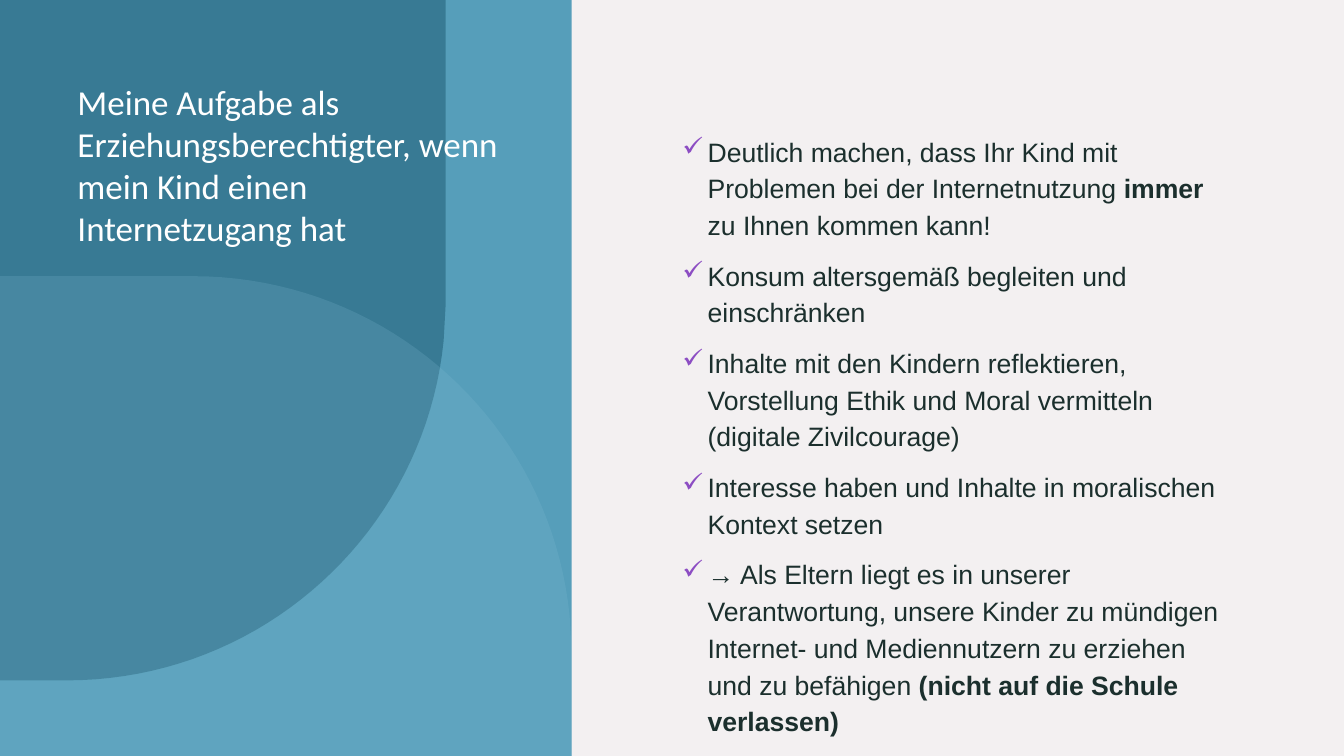
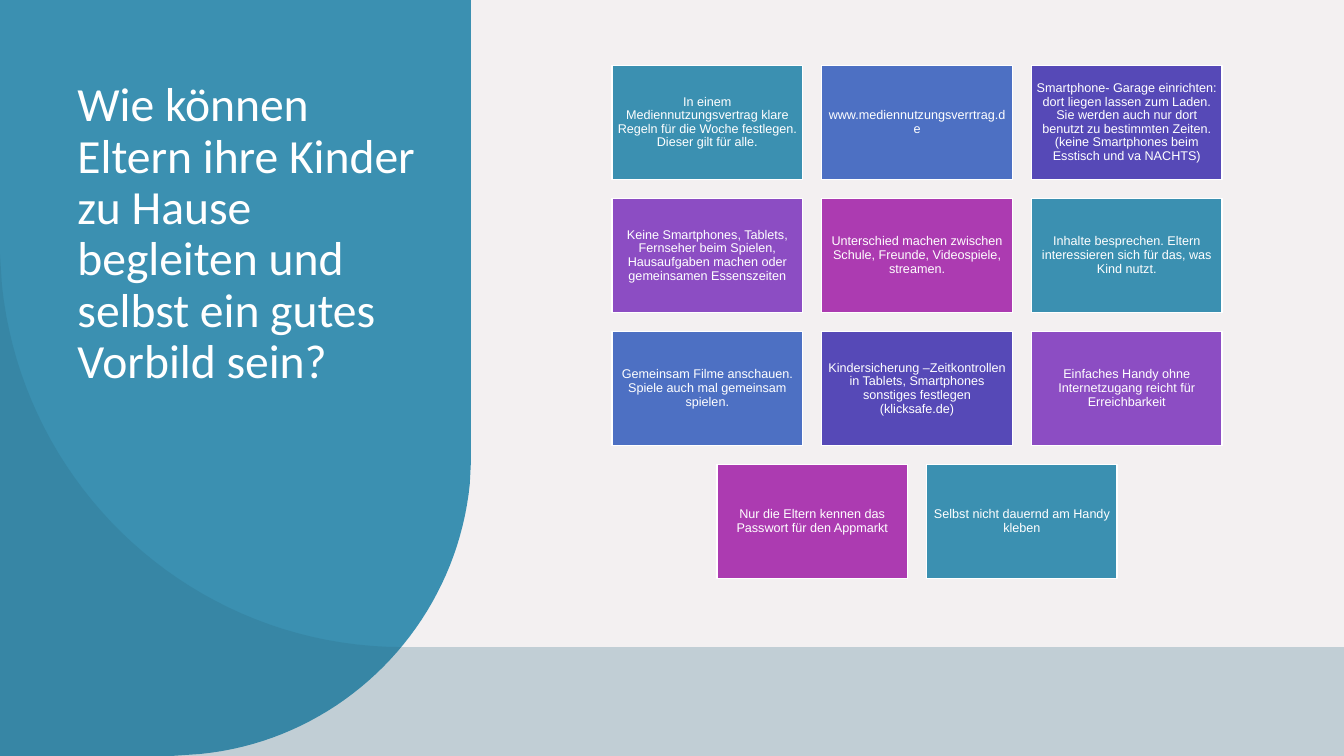
from dataclasses import dataclass

import lxml.etree
import pptx
import pptx.dml.color
import pptx.enum.shapes
import pptx.enum.text
import pptx.oxml.ns
import pptx.util

Inches = pptx.util.Inches
Pt = pptx.util.Pt
Align = pptx.enum.text.PP_ALIGN
Anchor = pptx.enum.text.MSO_ANCHOR


@dataclass(frozen=True)
class Theme:
    background: str = "F3F0F1"
    teal: str = "3B90B1"
    dark_teal: str = "2C6C85"
    light_teal: str = "84BFD6"
    blue: str = "4D70C3"
    indigo: str = "5649B7"
    violet: str = "8C4DC3"
    magenta: str = "AC3BB1"
    white: str = "FFFFFF"
    ink: str = "1B2F2D"
    title_font: str = "Calibri"
    body_font: str = "Arial"
    long_title_size: int = 25
    title_size: int = 34
    body_size: int = 19
    tile_size: int = 9

    @property
    def tile_colours(self):
        return [self.teal, self.blue, self.indigo, self.violet, self.magenta]


def rgb(colour):
    return pptx.dml.color.RGBColor.from_string(colour)


def add_child(parent, tag, **attributes):
    return lxml.etree.SubElement(parent, pptx.oxml.ns.qn(tag), attributes)


def curve_points(start, curve, steps=40):
    """Points along a cubic curve given as two control points and an end."""
    first, second, end = curve[0:2], curve[2:4], curve[4:6]
    for step in range(1, steps + 1):
        t = step / steps
        u = 1 - t
        yield tuple(
            u**3 * a + 3 * u * u * t * b + 3 * u * t * t * c + t**3 * d
            for a, b, c, d in zip(start, first, second, end)
        )


class SlideBuilder:
    def __init__(self, theme):
        self.theme = theme
        self.deck = pptx.Presentation()
        self.deck.slide_width = Inches(13.33)
        self.deck.slide_height = Inches(7.5)
        self.page = None

    def new_page(self):
        self.page = self.deck.slides.add_slide(self.deck.slide_layouts[6])
        fill = self.page.background.fill
        fill.solid()
        fill.fore_color.rgb = rgb(self.theme.background)

    def paint(self, shape, colour, opacity=100, outline=None):
        shape.shadow.inherit = False
        shape.fill.solid()
        shape.fill.fore_color.rgb = rgb(colour)
        if opacity < 100:
            tint = shape.element.spPr.find(".//" + pptx.oxml.ns.qn("a:srgbClr"))
            add_child(tint, "a:alpha", val=str(opacity * 1000))
        if outline:
            shape.line.color.rgb = rgb(outline)
            shape.line.width = Pt(1)
        else:
            shape.line.fill.background()

    def rectangle(self, left, top, width, height, colour, **look):
        shape = self.page.shapes.add_shape(
            pptx.enum.shapes.MSO_SHAPE.RECTANGLE,
            Inches(left), Inches(top), Inches(width), Inches(height))
        self.paint(shape, colour, **look)
        return shape

    def outline(self, start, segments, colour, opacity=100):
        """Closed shape; two numbers make a line, six make a curve."""
        points = [start]
        for segment in segments:
            if len(segment) == 2:
                points.append(segment)
            else:
                points.extend(curve_points(points[-1], segment))
        corners = [(Inches(x), Inches(y)) for x, y in points]
        builder = self.page.shapes.build_freeform(*corners[0])
        builder.add_line_segments(corners[1:], close=True)
        self.paint(builder.convert_to_shape(), colour, opacity)

    def text_box(self, left, top, width, height):
        box = self.page.shapes.add_textbox(
            Inches(left), Inches(top), Inches(width), Inches(height))
        box.text_frame.word_wrap = True
        return box.text_frame

    def style(self, para, font, size, colour, line_spacing):
        para.line_spacing = line_spacing
        para.font.name = font
        para.font.size = Pt(size)
        para.font.color.rgb = rgb(colour)

    def title(self, text, width, height, size, line_spacing=1.0):
        para = self.text_box(0.67, 0.75, width, height).paragraphs[0]
        para.text = text
        self.style(para, self.theme.title_font, size, self.theme.white,
                   line_spacing)

    def checklist(self, left, top, width, height, items):
        """Each item is a list of (text, bold) pairs."""
        frame = self.text_box(left, top, width, height)
        for index, item in enumerate(items):
            para = frame.paragraphs[0] if index == 0 else frame.add_paragraph()
            properties = para._p.get_or_add_pPr()
            properties.set("marL", str(Inches(0.25)))
            properties.set("indent", str(-Inches(0.25)))
            bullet_colour = add_child(properties, "a:buClr")
            add_child(bullet_colour, "a:srgbClr", val=self.theme.violet)
            add_child(properties, "a:buChar", char="✓")
            if index:
                para.space_before = Pt(10)
            self.style(para, self.theme.body_font, self.theme.body_size,
                       self.theme.ink, 1.15)
            for text, bold in item:
                span = para.add_run()
                span.text = text
                if bold:
                    span.font.bold = True

    def tile(self, left, top, width, height, text, colour):
        shape = self.rectangle(left, top, width, height, colour,
                               outline=self.theme.white)
        frame = shape.text_frame
        frame.word_wrap = True
        frame.vertical_anchor = Anchor.MIDDLE
        frame.margin_left = frame.margin_right = Inches(0.04)
        frame.margin_top = frame.margin_bottom = Inches(0.04)
        para = frame.paragraphs[0]
        para.text = text
        para.alignment = Align.CENTER
        self.style(para, self.theme.body_font, self.theme.tile_size,
                   self.theme.white, 0.9)

    def tile_grid(self, left, top, texts, columns=3):
        """Rows of equal tiles; a short last row is centred."""
        width, height, gap = 1.89, 1.13, 0.19
        colours = self.theme.tile_colours
        for index, text in enumerate(texts):
            row, column = divmod(index, columns)
            missing = max(0, (row + 1) * columns - len(texts))
            self.tile(left + (column + missing / 2) * (width + gap),
                      top + row * (height + gap), width, height,
                      text, colours[index % len(colours)])


def duties_page(slides):
    theme = slides.theme
    slides.new_page()
    # Left panel with two overlapping rounded shapes
    slides.rectangle(0, 0, 5.67, 7.5, theme.teal, opacity=85)
    slides.outline(
        (0, 0),
        [(4.42, 0), (4.42, 3.02), (4.4, 3.38),
         (4.21, 5.27, 2.61, 6.75, 0.66, 6.75), (0, 6.75)],
        theme.dark_teal, 70)
    slides.outline(
        (0, 2.74),
        [(1.91, 2.74), (3.86, 2.74, 5.46, 4.21, 5.65, 6.11),
         (5.67, 6.46), (5.67, 7.5), (0, 7.5)],
        theme.light_teal, 20)
    # Title and checklist
    slides.title("Meine Aufgabe als Erziehungsberechtigter, wenn mein Kind "
                 "einen Internetzugang hat", 4.42, 5.29, theme.long_title_size)
    slides.checklist(6.67, 1.25, 5.68, 5.5, [
        [("Deutlich machen, dass Ihr Kind mit Problemen bei der "
          "Internetnutzung ", False),
         ("immer", True), (" zu Ihnen kommen kann!", False)],
        [("Konsum altersgemäß begleiten und einschränken", False)],
        [("Inhalte mit den Kindern reflektieren, Vorstellung Ethik und Moral "
          "vermitteln (digitale Zivilcourage)", False)],
        [("Interesse haben und Inhalte in moralischen Kontext setzen", False)],
        [("→ Als Eltern liegt es in unserer Verantwortung, unsere Kinder zu "
          "mündigen Internet- und Mediennutzern zu erziehen und zu "
          "befähigen ", False),
         ("(nicht auf die Schule verlassen)", True)],
    ])


def example_page(slides):
    theme = slides.theme
    slides.new_page()
    # Rounded title panel and the band along the bottom
    slides.outline(
        (0, 0),
        [(4.67, 0), (4.67, 4.6), (4.66, 4.8),
         (4.52, 6.21, 3.4, 7.34, 1.99, 7.48), (1.7, 7.5), (0, 7.5)],
        theme.teal)
    slides.outline(
        (0, 2.52),
        [(0.02, 2.83), (0.23, 4.85, 1.93, 6.42, 4, 6.42),
         (13.33, 6.42), (13.33, 7.5), (0, 7.5)],
        theme.dark_teal, 25)
    # Title and tiles
    slides.title("Wie können Eltern ihre Kinder zu Hause begleiten und selbst "
                 "ein gutes Vorbild sein?", 3.67, 4.25, theme.title_size, 0.9)
    slides.tile_grid(6.07, 0.65, [
        "In einem Mediennutzungsvertrag klare Regeln für die Woche festlegen. "
        "Dieser gilt für alle.",
        "www.mediennutzungsverrtrag.de",
        "Smartphone- Garage einrichten: dort liegen lassen zum Laden. Sie "
        "werden auch nur dort benutzt zu bestimmten Zeiten. (keine "
        "Smartphones beim Esstisch und va NACHTS)",
        "Keine Smartphones, Tablets, Fernseher beim Spielen, Hausaufgaben "
        "machen oder gemeinsamen Essenszeiten",
        "Unterschied machen zwischen Schule, Freunde, Videospiele, streamen.",
        "Inhalte besprechen. Eltern interessieren sich für das, was Kind "
        "nutzt.",
        "Gemeinsam Filme anschauen. Spiele auch mal gemeinsam spielen.",
        "Kindersicherung –Zeitkontrollen in Tablets, Smartphones sonstiges "
        "festlegen (klicksafe.de)",
        "Einfaches Handy ohne Internetzugang reicht für Erreichbarkeit",
        "Nur die Eltern kennen das Passwort für den Appmarkt",
        "Selbst nicht dauernd am Handy kleben",
    ])


def main():
    slides = SlideBuilder(Theme())
    duties_page(slides)
    example_page(slides)
    slides.deck.save("out.pptx")


if __name__ == "__main__":
    main()
